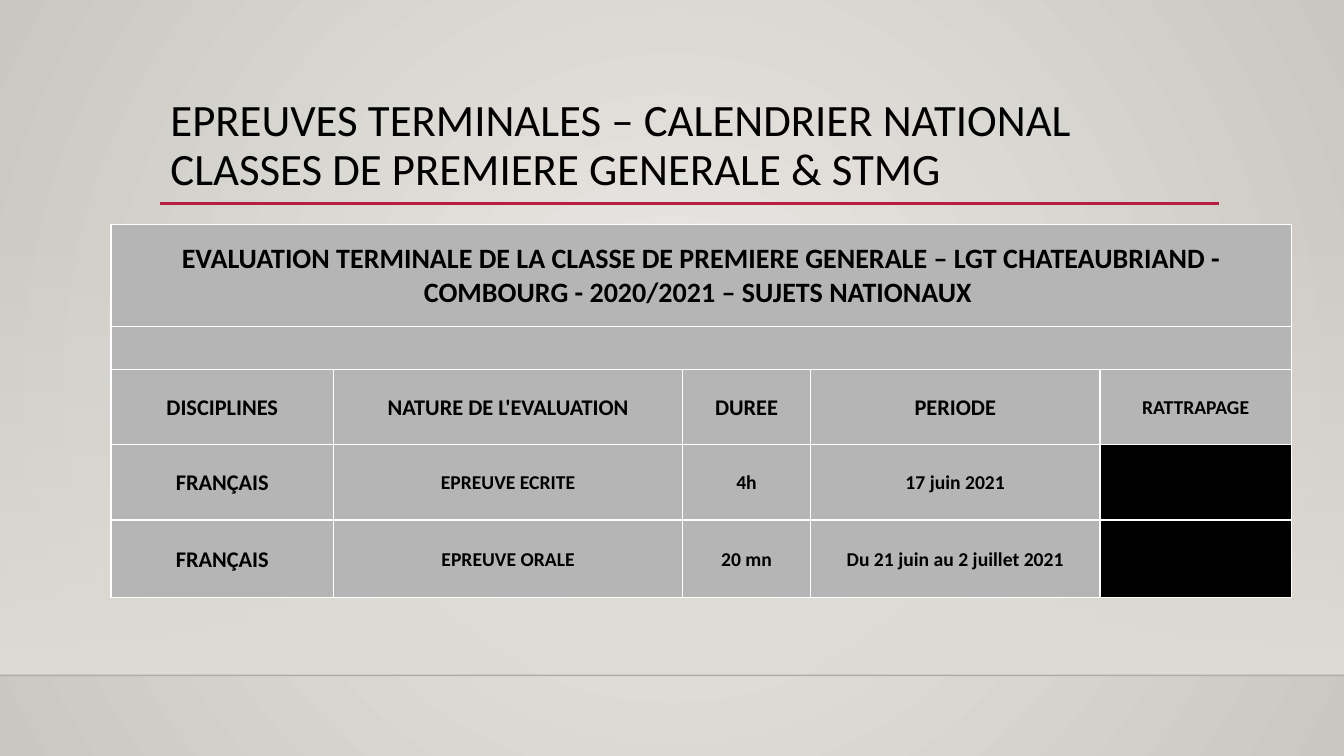
from dataclasses import dataclass

from lxml import etree
from pptx import Presentation
from pptx.dml.color import RGBColor
from pptx.enum.shapes import MSO_CONNECTOR as Connector, MSO_SHAPE as Preset
from pptx.enum.text import MSO_ANCHOR as Anchor, PP_ALIGN as Align
from pptx.oxml import parse_xml
from pptx.oxml.ns import nsdecls, qn
from pptx.util import Inches, Pt


@dataclass(frozen=True)
class Theme:
    """Colours, font and type sizes of the slide."""
    font: str = "Calibri"
    ink: str = "000000"
    glow: str = "ECEAE7"
    edge: str = "CAC7C1"
    floor: str = "DFDBD5"
    horizon: str = "000001"
    accent: str = "B71E42"
    grid: str = "FFFFFF"
    cell: str = "B5B5B5"
    title: int = 32
    heading: int = 20
    label: int = 16
    detail: int = 14


THEME = Theme()
COLUMNS = (2.21, 3.46, 1.27, 2.87, 1.9)
ROWS = (1.01, 0.43, 0.74, 0.75, 0.77)
HEADING = ("EVALUATION TERMINALE DE LA CLASSE DE PREMIERE GENERALE – "
           "LGT CHATEAUBRIAND - COMBOURG - 2020/2021 – SUJETS NATIONAUX ")
CALENDAR = (
    (HEADING, "", "", "", ""),
    ("", "", "", "", ""),
    ("DISCIPLINES", "NATURE DE L'EVALUATION", "DUREE", "PERIODE", "RATTRAPAGE"),
    ("FRANÇAIS", "EPREUVE ECRITE", "4h", "17 juin 2021", ""),
    ("FRANÇAIS", "EPREUVE ORALE", "20 mn", "Du 21 juin au 2 juillet 2021", ""),
)


def rgb(code):
    """Turn a hex code into a colour."""
    return RGBColor.from_string(code)


def set_alpha(element, percent):
    """Set the opacity of the first colour inside an element."""
    colour = next(element.iter(qn("a:srgbClr")))
    etree.SubElement(colour, qn("a:alpha")).set("val", str(percent * 1000))


def fill_gradient(fill, *codes):
    """Give a fill a two-stop gradient running downwards."""
    fill.gradient()
    fill.gradient_angle = 270
    for stop, code in zip(fill.gradient_stops, codes):
        stop.color.rgb = rgb(code)


def add_rule(slide, left, top, width, code, weight):
    """Draw a horizontal line without shadow."""
    rule = slide.shapes.add_connector(
        Connector.STRAIGHT, Inches(left), Inches(top), Inches(left + width), Inches(top))
    rule.line.color.rgb = rgb(code)
    rule.line.width = Pt(weight)
    etree.SubElement(rule._element.spPr, qn("a:effectLst"))
    return rule


def add_backdrop(slide, left, top, width, height):
    """Paint the radial background, the fading wall and the horizon."""
    fill_gradient(slide.background.fill, THEME.glow, THEME.edge)
    linear = next(slide._element.iter(qn("a:lin")))
    linear.getparent().replace(linear, parse_xml(
        f'<a:path {nsdecls("a")} path="circle">'
        '<a:fillToRect l="50000" t="50000" r="50000" b="50000"/></a:path>'))
    wall = slide.shapes.add_shape(
        Preset.RECTANGLE, Inches(left), Inches(top), Inches(width), Inches(height))
    wall.shadow.inherit = False
    wall.line.fill.background()
    fill_gradient(wall.fill, THEME.floor, THEME.floor)
    set_alpha(wall._element.spPr, 0)
    horizon = add_rule(slide, left, top + height, width, THEME.horizon, 1)
    set_alpha(horizon._element.spPr, 20)


def add_title(slide, left, top, width, height):
    """Place the title and the accent line under it."""
    add_rule(slide, left, top + height - 0.01, width, THEME.accent, 2.5)
    title = slide.shapes.title
    title.left, title.top = Inches(left), Inches(top)
    title.width, title.height = Inches(width), Inches(height)
    frame = title.text_frame
    frame.text = ("EPREUVES TERMINALES – CALENDRIER NATIONAL\v"
                  "CLASSES DE PREMIERE GENERALE & STMG")
    frame.word_wrap = True
    frame.vertical_anchor = Anchor.MIDDLE
    paragraph = frame.paragraphs[0]
    paragraph.alignment = Align.LEFT
    paragraph.line_spacing = 0.9
    for run in paragraph.runs:
        style_run(run, THEME.title, False)


def style_run(run, size, bold):
    """Apply the theme font to a run."""
    run.font.name = THEME.font
    run.font.size = Pt(size)
    run.font.bold = bold
    run.font.color.rgb = rgb(THEME.ink)


def text_size(row, column):
    """Choose the type size by place in the table."""
    if row == 0:
        return THEME.heading
    if column == 0 or row == 2 and column < 4:
        return THEME.label
    return THEME.detail


def style_cell(cell, text, size, fill):
    """Fill, border and write one cell."""
    cell.fill.solid()
    cell.fill.fore_color.rgb = rgb(fill)
    properties = cell._tc.get_or_add_tcPr()
    for index, side in enumerate("LRTB"):
        properties.insert(index, parse_xml(
            f'<a:ln{side} {nsdecls("a")} w="{Pt(1)}"><a:solidFill>'
            f'<a:srgbClr val="{THEME.grid}"/></a:solidFill></a:ln{side}>'))
    if not text:
        return
    cell.margin_left = cell.margin_right = cell.margin_top = Inches(0.01)
    cell.margin_bottom = 0
    cell.vertical_anchor = Anchor.MIDDLE
    cell.text_frame.text = text
    paragraph = cell.text_frame.paragraphs[0]
    paragraph.alignment = Align.CENTER
    style_run(paragraph.runs[0], size, True)


def add_calendar(slide, left, top):
    """Build the table of exams."""
    calendar = slide.shapes.add_table(
        len(ROWS), len(COLUMNS), Inches(left), Inches(top),
        Inches(sum(COLUMNS)), Inches(sum(ROWS))).table
    for column, width in zip(calendar.columns, COLUMNS):
        column.width = Inches(width)
    for row, height in zip(calendar.rows, ROWS):
        row.height = Inches(height)
    for row, texts in enumerate(CALENDAR):
        for column, text in enumerate(texts):
            fill = THEME.ink if row > 2 and column == 4 else THEME.cell
            style_cell(calendar.cell(row, column), text, text_size(row, column), fill)
    for row in (0, 1):
        calendar.cell(row, 0).merge(calendar.cell(row, len(COLUMNS) - 1))


def main():
    """Build and save the slide."""
    deck = Presentation()
    deck.slide_width, deck.slide_height = Inches(13.33), Inches(7.5)
    slide = deck.slides.add_slide(deck.slide_layouts[5])
    add_backdrop(slide, 0, 2.21, 13.33, 4.49)
    add_title(slide, 1.59, 0.88, 10.5, 1.15)
    add_calendar(slide, 1.1, 2.23)
    deck.save("out.pptx")


if __name__ == "__main__":
    main()
